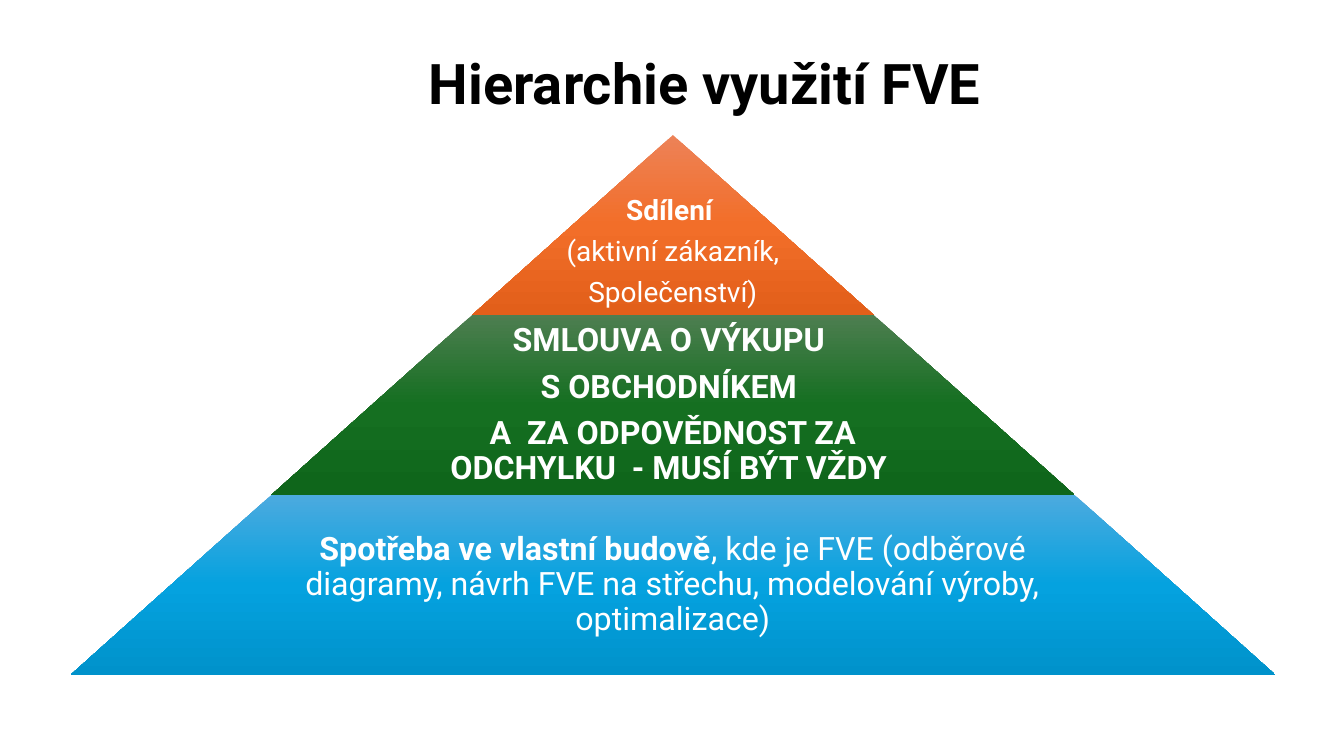
from copy import deepcopy

from pptx import Presentation
from pptx.dml.color import RGBColor
from pptx.enum.shapes import MSO_SHAPE
from pptx.enum.text import MSO_ANCHOR, MSO_AUTO_SIZE, PP_ALIGN
from pptx.util import Pt

BLACK = RGBColor(0x00, 0x00, 0x00)
WHITE = RGBColor(0xFF, 0xFF, 0xFF)
ORANGES = [RGBColor(0xED, 0x82, 0x57), RGBColor(0xF2, 0x6E, 0x29), RGBColor(0xE2, 0x5F, 0x1A)]
GREENS = [RGBColor(0x4D, 0x7E, 0x50), RGBColor(0x15, 0x6F, 0x21), RGBColor(0x0F, 0x66, 0x1B)]
BLUES = [RGBColor(0x4C, 0xAA, 0xDF), RGBColor(0x05, 0xA2, 0xDF), RGBColor(0x00, 0x92, 0xCB)]

# Pyramid geometry in points
CENTER, TOP, BAND_H, STEP_W = 480.7, 96.5, 128.5, 286.8
SLOPE = STEP_W / 2 / BAND_H
INSET = 2

# Each band: colours, text width share, extra top inset, size, space after, paragraphs of (text, bold)
BANDS = [
    (ORANGES, 1, 39, 20, 7.5, [
        [("Sdílení ", True)],
        [("(aktivní zákazník,", False)],
        [("Společenství)", False)]]),
    (GREENS, 0.65, 0, 23, 8.5, [
        [("SMLOUVA O VÝKUPU ", True)],
        [("S OBCHODNÍKEM ", True)],
        [("A  ZA ODPOVĚDNOST ZA ODCHYLKU  - MUSÍ BÝT VŽDY ", True)]]),
    (BLUES, 0.65, 0, 23, 8.5, [
        [("Spotřeba ve vlastní budově", True),
         (", kde je FVE (odběrové diagramy, návrh FVE na střechu, "
          "modelování výroby, optimalizace)", False)]]),
]


def set_attrs(obj, values):
    for name, value in values.items():
        setattr(obj, name, value)


class SlideBuilder:
    font = "Roboto"
    para = {"alignment": PP_ALIGN.CENTER, "line_spacing": 0.9, "space_before": Pt(0)}
    frame = {"word_wrap": True, "auto_size": MSO_AUTO_SIZE.NONE,
             "vertical_anchor": MSO_ANCHOR.MIDDLE}

    def __init__(self, slide):
        self.s = slide

    def fill_text(self, tf, paragraphs, size, color, gap=0):
        set_attrs(tf, self.frame)
        for i, runs in enumerate(paragraphs):
            p = tf.add_paragraph() if i else tf.paragraphs[0]
            last = i == len(paragraphs) - 1
            set_attrs(p, {**self.para, "space_after": Pt(0 if last else gap)})
            for text, bold in runs:
                r = p.add_run()
                r.text = text
                set_attrs(r.font, {"name": self.font, "size": Pt(size), "bold": bold})
                r.font.color.rgb = color

    def title(self, text, x, y, w, h):
        sp = self.s.shapes.title
        set_attrs(sp, {"left": Pt(x), "top": Pt(y), "width": Pt(w), "height": Pt(h)})
        self.fill_text(sp.text_frame, [[(text, True)]], 40, BLACK)

    def trapezoid(self, x, y, w, h, colors):
        sp = self.s.shapes.add_shape(MSO_SHAPE.TRAPEZOID, Pt(x), Pt(y), Pt(w), Pt(h))
        sp.adjustments[0] = SLOPE
        sp.shadow.inherit = False
        sp.line.fill.background()
        sp.fill.gradient()
        sp.fill.gradient_angle = 270
        # The default gradient has two stops; add a middle one
        first = sp._element.spPr.xpath(".//a:gs")[0]
        first.addnext(deepcopy(first))
        for i, (stop, color) in enumerate(zip(sp.fill.gradient_stops, colors)):
            stop.position = i / 2
            stop.color.rgb = color

    def label(self, x, y, w, h, paragraphs, size, gap, drop):
        tf = self.s.shapes.add_textbox(Pt(x), Pt(y), Pt(w), Pt(h)).text_frame
        set_attrs(tf, {"margin_left": Pt(INSET), "margin_right": Pt(INSET),
                       "margin_top": Pt(INSET + drop), "margin_bottom": Pt(INSET)})
        self.fill_text(tf, paragraphs, size, WHITE, gap)


def main():
    prs = Presentation()
    set_attrs(prs, {"slide_width": Pt(960), "slide_height": Pt(540)})
    builder = SlideBuilder(prs.slides.add_slide(prs.slide_layouts[5]))

    # Title
    builder.title("Hierarchie využití FVE", 108, 27.4, 790.6, 69.1)

    # Pyramid bands, each one step wider than the one above
    for i, (colors, share, drop, size, gap, paragraphs) in enumerate(BANDS):
        y, w = TOP + i * BAND_H, (i + 1) * STEP_W
        text_w = w * share
        builder.trapezoid(CENTER - w / 2, y, w, BAND_H, colors)
        builder.label(CENTER - text_w / 2, y, text_w, BAND_H, paragraphs, size, gap, drop)

    prs.save("out.pptx")


if __name__ == "__main__":
    main()
